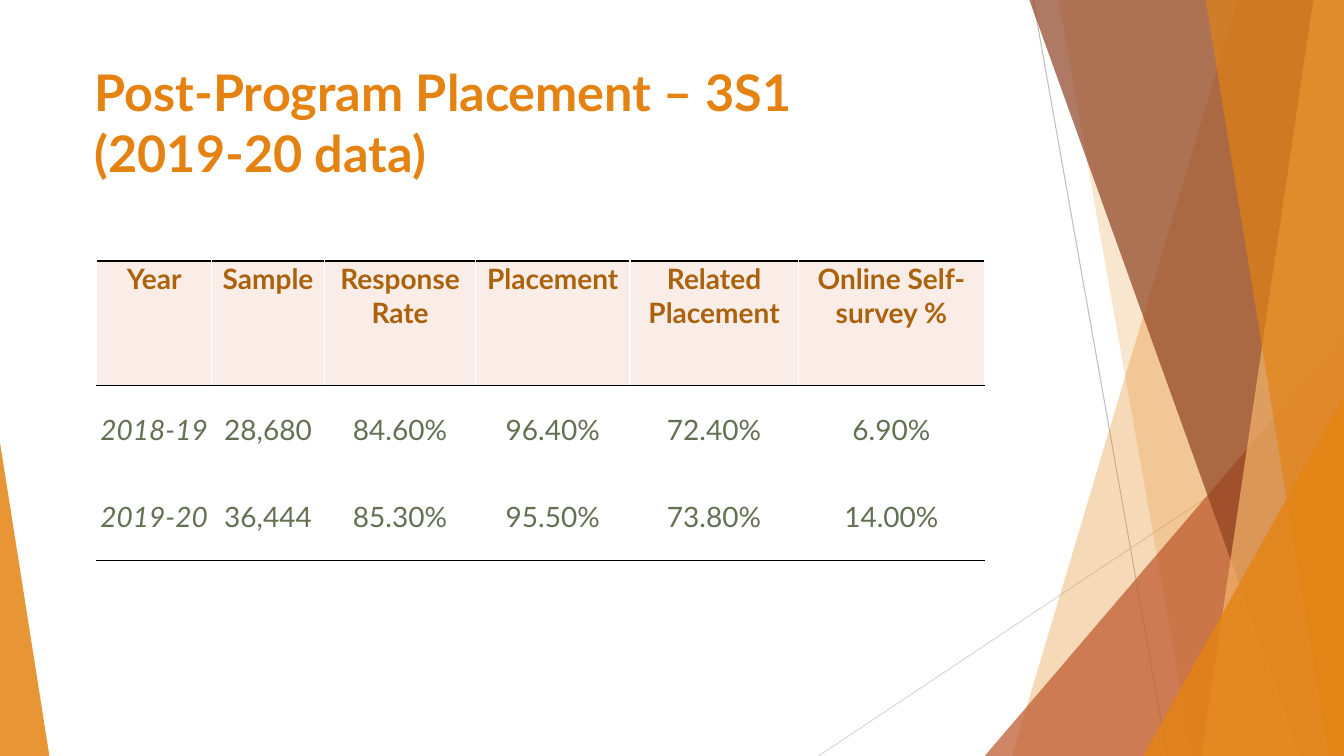
from lxml import etree
from pptx import Presentation
from pptx.dml.color import RGBColor
from pptx.enum import shapes as sh, text as tx
from pptx.oxml.ns import qn
from pptx.util import Pt

TITLE = "Post-Program Placement – 3S1\n(2019-20 data)"
ROWS = [
    ("Year", "Sample", "Response Rate", "Placement", "Related Placement", "Online Self-survey %"),
    ("2018-19", "28,680", "84.60%", "96.40%", "72.40%", "6.90%"),
    ("2019-20", "36,444", "85.30%", "95.50%", "73.80%", "14.00%"),
]
COLS = (82.1, 80.6, 108, 110.2, 120.2, 133.2)
HIGHS = (88.6, 62.6, 62.6)

THEME = {
    "font": "Lato", "title": 36, "cell": 20,
    "orange": "E48312", "rust": "BD582C", "brown": "8E4221", "sand": "F3B56C",
    "head": "AB620D", "body": "637052", "tint": "FAEDE7",
    "rule": "000000", "white": "FFFFFF", "gray": "BFBFBF", "pale": "D9D9D9",
}
WIDE, HIGH, TOP = 960, 540, -0.6

LINES = [
    ((738, 0), (833.8, HIGH), "gray"),
    ((WIDE, 290.2), (584.6, HIGH), "pale"),
]
SHARDS = [
    ("band", (884.2, 722.9), "orange", 30),
    ("band", (756, 851.8), "orange", 20),
    ("peak", (703.4, 239.8, 256.6, 1), "rust", 72),
    ("band", (735.1, 929.5), "brown", 70),
    ("band", (938.2, 858.2), "sand", 70),
    ("band", (861.1, 949), "orange", 65),
    ("peak", (816.5, 283, 143.5, 1), "orange", 80),
    ("peak", (0, 316.1, 35.3, 0), "orange", 85),
]


def color(name):
    return RGBColor.from_string(THEME[name])


def write(frame, words, size, tone, bold=False, slant=False, align=tx.PP_ALIGN.LEFT):
    para = frame.paragraphs[0]
    para.text = words
    para.alignment = align
    for run in para.runs:
        font = run.font
        font.name, font.size = THEME["font"], Pt(THEME[size])
        font.bold, font.italic = bold, slant
        font.color.rgb = color(tone)


def draw_line(slide, start, end, tone):
    line = slide.shapes.add_connector(
        sh.MSO_CONNECTOR.STRAIGHT, *(Pt(n) for n in start + end))
    line.line.color.rgb = color(tone)
    line.line.width = Pt(0.75)
    etree.SubElement(line._element.spPr, qn("a:effectLst"))


def draw_shard(slide, kind, place, tone, alpha):
    if kind == "band":
        head, foot = place
        form = slide.shapes.build_freeform(Pt(head), Pt(TOP), scale=1.0)
        ends = [(WIDE, TOP), (WIDE, HIGH), (foot, HIGH)]
        form.add_line_segments([(Pt(x), Pt(y)) for x, y in ends], close=True)
        shard = form.convert_to_shape()
    else:
        left, top, width, tip = place
        shard = slide.shapes.add_shape(
            sh.MSO_SHAPE.ISOSCELES_TRIANGLE, Pt(left), Pt(top), Pt(width), Pt(HIGH - top))
        shard.adjustments[0] = tip
    shard.shadow.inherit = False
    shard.line.fill.background()
    shard.fill.solid()
    shard.fill.fore_color.rgb = color(tone)
    paint = shard._element.spPr.find(qn("a:solidFill"))[0]
    etree.SubElement(paint, qn("a:alpha"), val=str(alpha * 1000))


def add_edges(cell, tones):
    props = cell._tc.get_or_add_tcPr()
    for spot, (side, tone) in enumerate(tones.items()):
        edge = etree.Element(qn("a:ln" + side), w=str(Pt(1)))
        fill = etree.SubElement(edge, qn("a:solidFill"))
        etree.SubElement(fill, qn("a:srgbClr"), val=THEME[tone])
        props.insert(spot, edge)


def fill_cell(cell, words, row, col):
    head = row == 0
    cell.margin_left = cell.margin_right = cell.margin_top = Pt(0.7)
    cell.margin_bottom = Pt(0)
    cell.vertical_anchor = tx.MSO_ANCHOR.TOP if head else tx.MSO_ANCHOR.MIDDLE
    if head:
        cell.fill.solid()
        cell.fill.fore_color.rgb = color("tint")
    else:
        cell.fill.background()
    write(cell.text_frame, words, "cell", "head" if head else "body", bold=head,
          slant=not head and col == 0, align=tx.PP_ALIGN.CENTER)
    last = len(ROWS) - 1
    add_edges(cell, {
        "L": "white", "R": "white",
        "T": "white" if row == last else "rule",
        "B": "rule" if row in (0, last) else "white",
    })


def add_grid(slide):
    grid = slide.shapes.add_table(
        len(ROWS), len(COLS), Pt(69.1), Pt(186.5), Pt(sum(COLS)), Pt(sum(HIGHS))).table
    grid.first_row = grid.horz_banding = False
    for col, width in enumerate(COLS):
        grid.columns[col].width = Pt(width)
    for row, items in enumerate(ROWS):
        grid.rows[row].height = Pt(HIGHS[row])
        for col, words in enumerate(items):
            fill_cell(grid.cell(row, col), words, row, col)


def main():
    deck = Presentation()
    deck.slide_width, deck.slide_height = Pt(WIDE), Pt(HIGH)
    slide = deck.slides.add_slide(deck.slide_layouts[6])
    for line in LINES:
        draw_line(slide, *line)
    for shard in SHARDS:
        draw_shard(slide, *shard)
    frame = slide.shapes.add_textbox(Pt(60.5), Pt(40.3), Pt(759.6), Pt(99.4)).text_frame
    frame.word_wrap = True
    write(frame, TITLE, "title", "orange", bold=True)
    add_grid(slide)
    deck.save("out.pptx")


if __name__ == "__main__":
    main()
